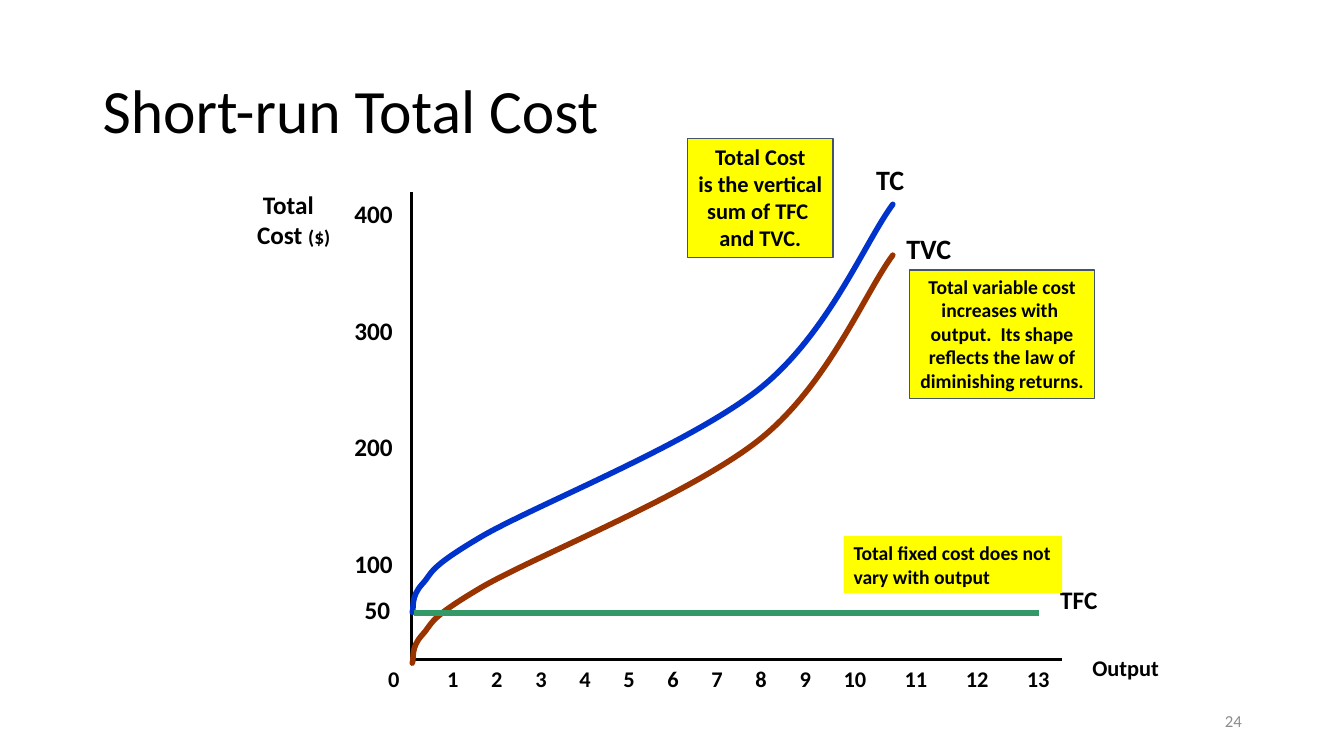
from lxml import etree
from pptx import Presentation
from pptx import util as u
from pptx.dml.color import RGBColor
from pptx.enum import shapes, text
from pptx.oxml.ns import qn

LEFT, MID, RIGHT = text.PP_ALIGN.LEFT, text.PP_ALIGN.CENTER, text.PP_ALIGN.RIGHT
GROW = text.MSO_AUTO_SIZE.SHAPE_TO_FIT_TEXT
BLACK, EDGE = "000000", "44546A"
CURVE = [
    (10.39, 16.71), (10.44, 16.59), (10.34, 16.33), (10.64, 16),
    (10.92, 15.7), (10.74, 15.62), (12.17, 14.78),
    (13.59, 13.97), (17.42, 12.45), (19.15, 11.07),
    (20.88, 9.68), (21.79, 7.39), (22.5, 6.43),
]


def tint(color):
    return RGBColor.from_string(color)


def stroke(shape, color, width):
    shape.line.fill.solid()
    shape.line.fill.fore_color.rgb = tint(color)
    shape.line.width = u.Pt(width)


def write(frame, lines, size, align=LEFT, bold=True, color=BLACK):
    for i, line in enumerate(lines):
        para = frame.paragraphs[0] if i == 0 else frame.add_paragraph()
        para.alignment = align
        for part, scale in line if isinstance(line, list) else [(line, size)]:
            run = para.add_run()
            run.text = part
            run.font.name = "Calibri"
            run.font.size = u.Pt(scale)
            run.font.bold = bold
            run.font.color.rgb = tint(color)


def label(host, box, lines, size, wrap=False):
    frame = host.shapes.add_textbox(*map(u.Cm, box)).text_frame
    frame.word_wrap = wrap
    frame.auto_size = GROW
    write(frame, lines, size)


def note(host, box, lines, size, align=MID, edge=None):
    shape = host.shapes.add_shape(shapes.MSO_SHAPE.RECTANGLE, *map(u.Cm, box))
    shape.shadow.inherit = False
    shape.fill.solid()
    shape.fill.fore_color.rgb = tint("FFFF00")
    if edge:
        stroke(shape, edge, 1)
    else:
        shape.line.fill.background()
    frame = shape.text_frame
    frame.word_wrap = False
    frame.auto_size = GROW
    frame.vertical_anchor = text.MSO_ANCHOR.TOP
    write(frame, lines, size, align)


def rule(host, ends, color, width):
    line = host.shapes.add_connector(
        shapes.MSO_CONNECTOR.STRAIGHT, *map(u.Cm, ends))
    stroke(line, color, width)
    etree.SubElement(line.element.spPr, qn("a:effectLst"))


def bend(shape):
    legs = list(shape.element.iter(qn("a:lnTo")))
    for i in range(0, len(legs), 3):
        cubic = etree.Element(qn("a:cubicBezTo"))
        legs[i].addprevious(cubic)
        for leg in legs[i:i + 3]:
            cubic.append(leg[0])
            leg.getparent().remove(leg)


def curve(host, rise, color):
    spots = [(u.Cm(x), u.Cm(y - rise)) for x, y in CURVE]
    form = host.shapes.build_freeform(*spots[0])
    form.add_line_segments(spots[1:], close=False)
    shape = form.convert_to_shape()
    bend(shape)
    shape.shadow.inherit = False
    shape.fill.background()
    stroke(shape, color, 4)
    shape.element.spPr.find(qn("a:ln")).set("cap", "rnd")


def title(slide, words):
    shape = slide.shapes.title
    shape.left, shape.top, shape.width, shape.height = map(
        u.Cm, (2.33, 1.02, 29.21, 3.68))
    frame = shape.text_frame
    frame.vertical_anchor = text.MSO_ANCHOR.MIDDLE
    write(frame, [words], 44, bold=False)
    frame.paragraphs[0].line_spacing = 0.9


def axes(host):
    rule(host, (10.36, 4.85, 10.36, 16.69), BLACK, 2)
    rule(host, (10.39, 16.61, 26.77, 16.61), BLACK, 2)
    label(host, (27.28, 16.36, 2.21, 0.94), ["Output"], 16)
    label(host, (6.23, 4.65, 2.36, 1.78),
          [" Total", [("Cost ", 18), ("($)", 14)]], 18)
    for i, cost in enumerate((100, 200, 300, 400)):
        label(host, (8.68, 13.69 - 2.94 * i, 1.47, 1.02), [str(cost)], 18)
    for n in range(14):
        if n == 0:
            left, width = 9.53, 0.81
        elif n < 10:
            left, width = 11.02 + 1.11 * (n - 1), 0.81
        else:
            left, width = 21.01 + 1.54 * (n - 10), 1.12
        label(host, (left, 16.64, width, 0.91), [str(n)], 16)


def rising(host):
    curve(host, 0, "993300")
    label(host, (22.59, 5.72, 1.65, 1.09), ["TVC"], 20)
    note(host, (22.92, 6.8, 4.67, 3.25),
         ["Total variable cost", "increases with ", "output.  Its shape",
          "reflects the law of", "diminishing returns."], 14, edge=EDGE)


def total(host):
    curve(host, 1.28, "0033CC")
    label(host, (21.83, 3.98, 1.22, 1.09), ["TC"], 20)
    note(host, (17.33, 3.49, 3.66, 3),
         ["Total Cost", "is the vertical", "sum of TFC ", "and TVC."],
         16, edge=EDGE)


def fixed(host):
    rule(host, (10.44, 15.44, 26.19, 15.44), "339966", 4)
    label(host, (26.47, 14.61, 1.55, 1.02), ["TFC"], 18, wrap=True)
    label(host, (8.94, 14.86, 1.17, 1.02), ["50"], 18)
    note(host, (21.26, 13.51, 5.51, 1.44),
         ["Total fixed cost does not", "vary with output"], 14, LEFT)


def number(slide, words):
    box = slide.shapes.add_textbox(*map(u.Cm, (23.93, 17.65, 7.62, 1.02)))
    frame = box.text_frame
    frame.word_wrap = True
    frame.vertical_anchor = text.MSO_ANCHOR.MIDDLE
    write(frame, [words], 12, RIGHT, bold=False, color="8C8C8C")


def main():
    deck = Presentation()
    deck.slide_width, deck.slide_height = u.Cm(33.87), u.Cm(19.05)
    slide = deck.slides.add_slide(deck.slide_layouts[5])
    title(slide, "Short-run Total Cost")
    for draw in (axes, rising, total, fixed):
        draw(slide.shapes.add_group_shape())
    number(slide, "24")
    deck.save("out.pptx")


if __name__ == "__main__":
    main()
